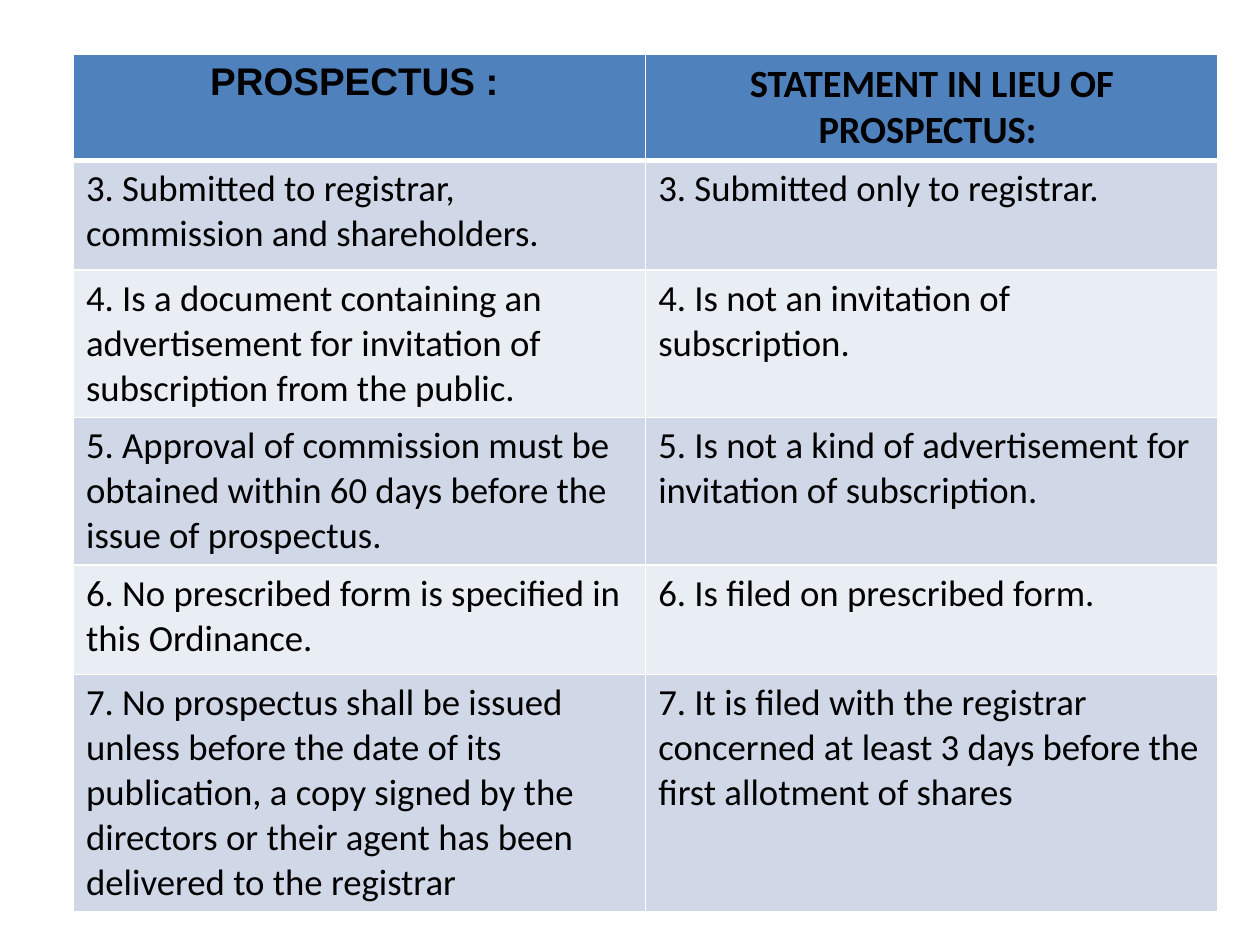
from typing import NamedTuple

from lxml import etree
from pptx import Presentation
from pptx.dml.color import RGBColor
from pptx.enum import text
from pptx.oxml import ns
from pptx.util import Pt

BLACK = RGBColor(0x00, 0x00, 0x00)
WHITE = RGBColor(0xFF, 0xFF, 0xFF)
BLUE = RGBColor(0x4F, 0x81, 0xBD)
BAND_DARK = RGBColor(0xD0, 0xD8, 0xE8)
BAND_LIGHT = RGBColor(0xE9, 0xED, 0xF4)

LEFT, TOP = 42, 31
COLUMN_WIDTH = 327


class Row(NamedTuple):
    height: float
    prospectus: str
    statement: str


HEADER = Row(60, "PROSPECTUS : ", "STATEMENT IN LIEU OF PROSPECTUS: ")
HEADER_FONTS = ("Arial", "Calibri")
BODY = [
    Row(62.6, "3. Submitted to registrar, commission and shareholders.",
        "3. Submitted only to registrar."),
    Row(84, "4. Is a document containing an advertisement for invitation of "
            "subscription from the public.",
        "4. Is not an invitation of subscription."),
    Row(84, "5. Approval of commission must be obtained within 60 days before "
            "the issue of prospectus.",
        "5. Is not a kind of advertisement for invitation of subscription."),
    Row(62.6, "6. No prescribed form is specified in this Ordinance.",
        "6. Is filed on prescribed form."),
    Row(135, "7. No prospectus shall be issued unless before the date of its "
             "publication, a copy signed by the directors or their agent has "
             "been delivered to the registrar",
        "7. It is filed with the registrar concerned at least 3 days before "
        "the first allotment of shares"),
]


def write(tf, content: str, *, size: float = 21, font: str = "Calibri",
          bold: bool = False, color: RGBColor = BLACK,
          align=text.PP_ALIGN.LEFT) -> None:
    p = tf.paragraphs[0]
    p.alignment = align
    r = p.add_run()
    r.text = content
    r.font.size = Pt(size)
    r.font.name = font
    r.font.bold = bold
    r.font.color.rgb = color


def set_borders(cell, **widths: float) -> None:
    """Draw white cell borders; widths are keyed L, R, T and B."""
    props = cell._tc.get_or_add_tcPr()
    for i, side in enumerate("LRTB"):
        ln = etree.Element(ns.qn(f"a:ln{side}"), w=str(Pt(widths[side])))
        fill = etree.SubElement(ln, ns.qn("a:solidFill"))
        etree.SubElement(fill, ns.qn("a:srgbClr"), val=str(WHITE))
        props.insert(i, ln)


def style_cell(cell, fill: RGBColor, *, top: float = 1, bottom: float = 1) -> None:
    cell.fill.solid()
    cell.fill.fore_color.rgb = fill
    set_borders(cell, L=1, R=1, T=top, B=bottom)


def add_comparison(slide) -> None:
    rows = [HEADER, *BODY]
    table = slide.shapes.add_table(
        len(rows), 2, Pt(LEFT), Pt(TOP), Pt(2 * COLUMN_WIDTH),
        Pt(sum(row.height for row in rows))).table
    table.first_row = table.horz_banding = False
    for column in table.columns:
        column.width = Pt(COLUMN_WIDTH)
    for i, row in enumerate(rows):
        table.rows[i].height = Pt(row.height)
        for j, content in enumerate((row.prospectus, row.statement)):
            cell = table.cell(i, j)
            if i == 0:
                style_cell(cell, BLUE, bottom=3)
                write(cell.text_frame, content, size=22, font=HEADER_FONTS[j],
                      bold=True, align=text.PP_ALIGN.CENTER)
            else:
                style_cell(cell, BAND_DARK if i % 2 else BAND_LIGHT,
                           top=3 if i == 1 else 1)
                write(cell.text_frame, content)


def main() -> None:
    prs = Presentation()
    prs.slide_width, prs.slide_height = Pt(720), Pt(540)
    add_comparison(prs.slides.add_slide(prs.slide_layouts[6]))
    prs.save("out.pptx")


if __name__ == "__main__":
    main()
